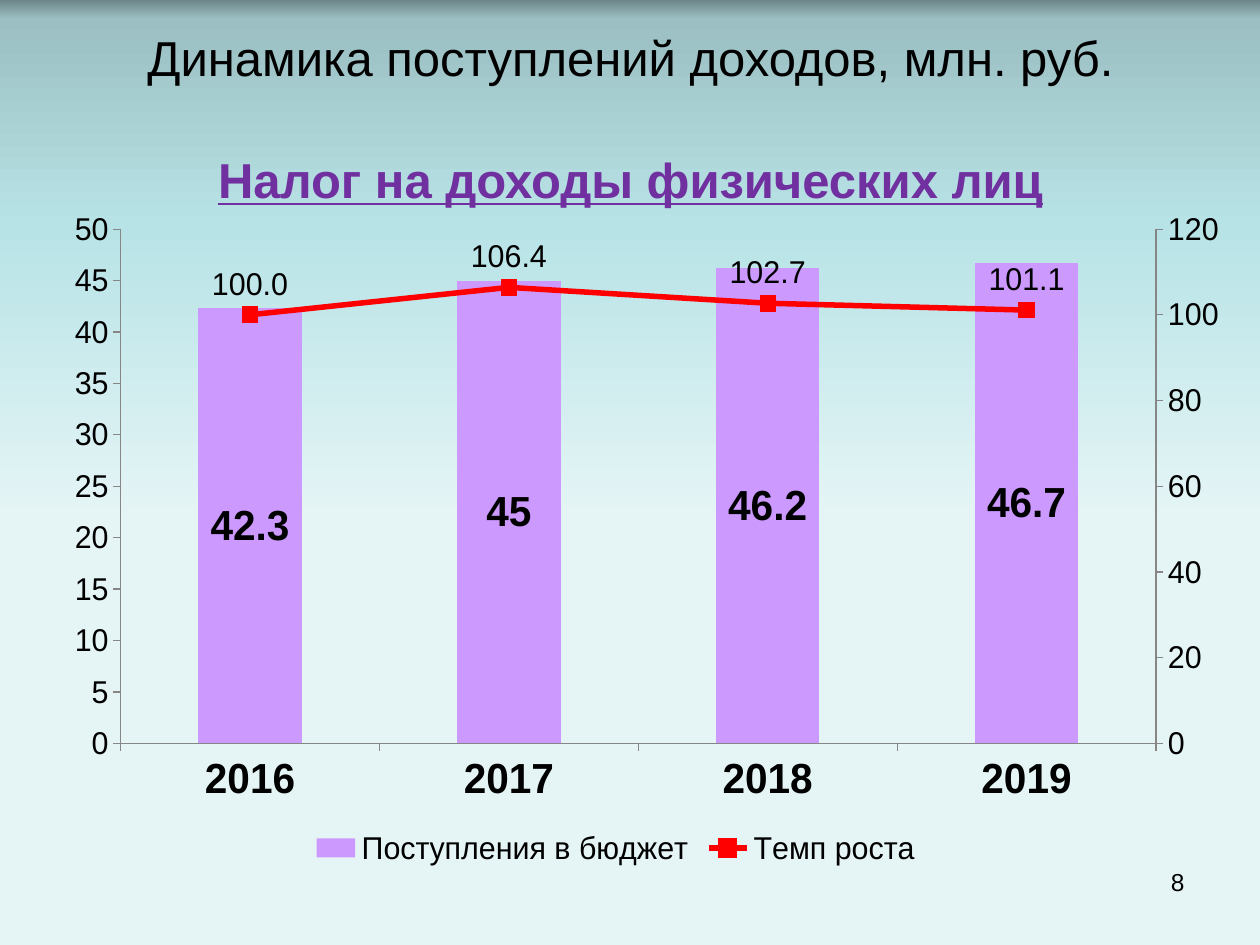
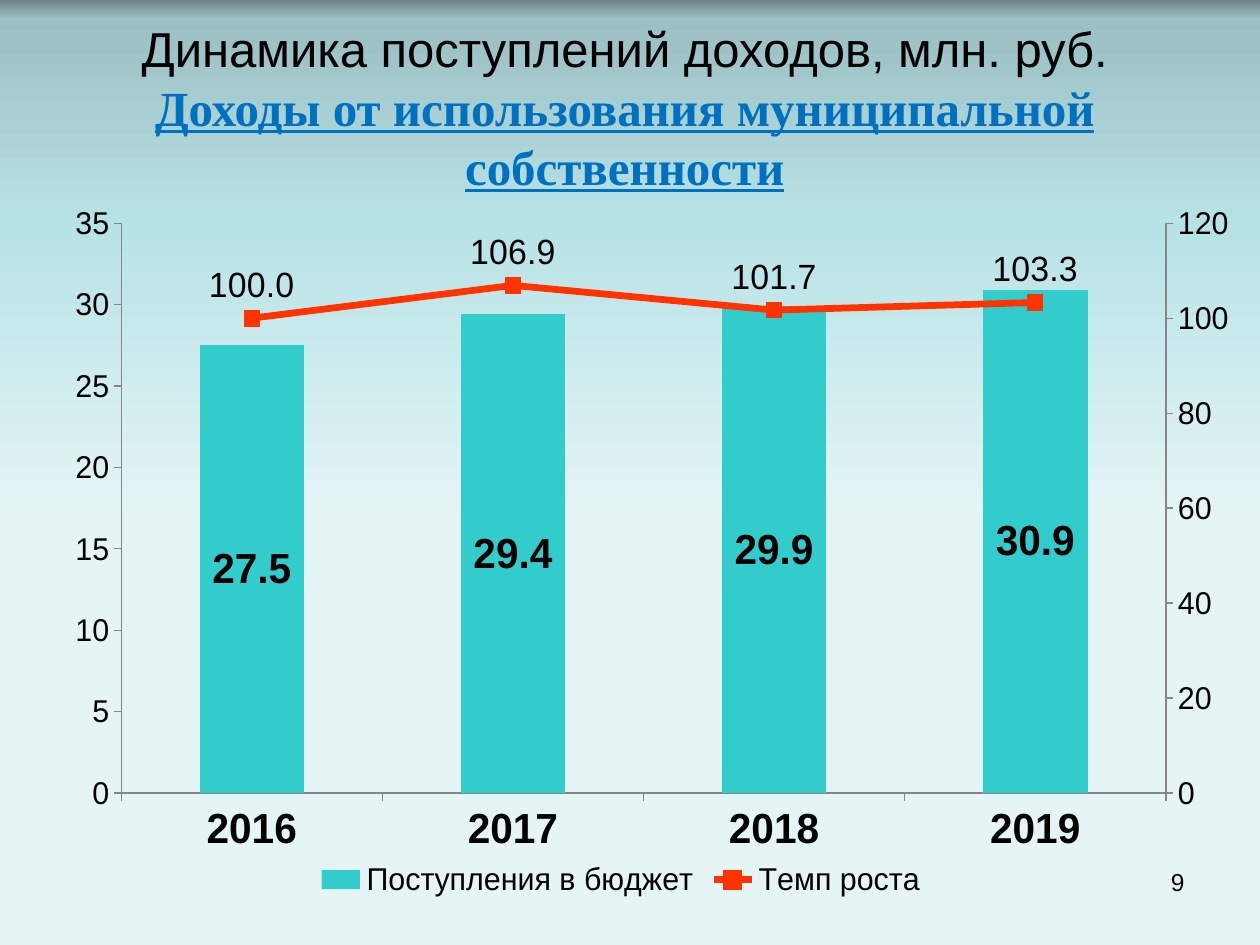
from copy import deepcopy

from pptx import Presentation
from pptx import util as u
from pptx.chart import axis as ax
from pptx.chart.data import CategoryChartData
from pptx.dml.color import RGBColor
from pptx.enum import chart as ch, text
from pptx.oxml import parse_xml
from pptx.oxml.ns import nsdecls, qn

INK = {
    "text": "000000", "axis": "868686",
    "violet": "7030A0", "lilac": "CC99FF", "red": "FF0000",
    "blue": "0070C0", "teal": "33CCCC", "orange": "FF3300",
}
SKY = [(0, "6D8688"), (2, "9BBFC2"), (24, "B8E3E6"), (55, "E5F5F6")]
YEARS = ["2016", "2017", "2018", "2019"]
HEAD = "Динамика поступлений доходов, млн. руб."


def rgb(name):
    return RGBColor.from_string(INK[name])


class Deck:
    face = "Arial"

    def __init__(self):
        self.prs = Presentation()
        self.prs.slide_width, self.prs.slide_height = u.Cm(25.4), u.Cm(19.05)
        self.slide = None
        self.sky()

    def sky(self):
        """Vertical gradient behind every slide."""
        master = self.prs.slide_master
        fill = master.background.fill
        fill.gradient()
        fill.gradient_angle = 270
        stops = next(master._element.iter(qn("a:gsLst")))
        for stop in list(stops):
            stops.remove(stop)
        for pos, tone in SKY:
            stops.append(parse_xml(
                f'<a:gs {nsdecls("a")} pos="{pos * 1000}">'
                f'<a:srgbClr val="{tone}"/></a:gs>'))

    def page(self, num):
        self.slide = self.prs.slides.add_slide(self.prs.slide_layouts[6])
        frame = self.box(18.21, 17.35, 5.92, 1.32)
        self.line(frame.paragraphs[0], str(num), 14, text.PP_ALIGN.RIGHT)

    def box(self, *at):
        frame = self.slide.shapes.add_textbox(*map(u.Cm, at)).text_frame
        frame.word_wrap = True
        return frame

    def line(self, para, words, size, align, tone="text", face=None):
        para.text, para.alignment = words, align
        font = para.font
        font.size, font.name = u.Pt(size), face or self.face
        font.color.rgb = rgb(tone)
        return font

    def title(self, at, topic, tone, face=None, gap=0):
        frame = self.box(*at)
        frame.vertical_anchor = text.MSO_ANCHOR.MIDDLE
        mid = text.PP_ALIGN.CENTER
        self.line(frame.paragraphs[0], HEAD, 28, mid)
        para = frame.add_paragraph()
        para.space_before = u.Pt(gap)
        font = self.line(para, topic, 28, mid, tone, face)
        font.bold = font.underline = True

    def chart(self, at, plot, sums, rates, bar, trend, width, size):
        """Stacked columns with a growth line on the right-hand axis."""
        data = CategoryChartData()
        data.categories = YEARS
        data.add_series("Поступления в бюджет", sums)
        data.add_series("Темп роста", rates)
        chart = self.slide.shapes.add_chart(
            ch.XL_CHART_TYPE.COLUMN_STACKED, *map(u.Cm, at), data).chart
        chart.has_title = False
        chart.font.size, chart.font.name = u.Pt(18), self.face
        chart.font.color.rgb = rgb("text")
        chart.has_legend = True
        chart.legend.position = ch.XL_LEGEND_POSITION.BOTTOM
        chart.legend.include_in_layout = False

        # Axes
        for axis in (chart.category_axis, chart.value_axis):
            axis.has_major_gridlines = False
            axis.major_tick_mark = ch.XL_TICK_MARK.OUTSIDE
            axis.minor_tick_mark = ch.XL_TICK_MARK.NONE
            axis.format.line.color.rgb = rgb("axis")
        font = chart.category_axis.tick_labels.font
        font.size, font.bold = u.Pt(24), True
        chart.value_axis.minimum_scale = 0
        area = chart._chartSpace.chart.plotArea
        self.split(area)
        self.place(area, plot)

        # Columns
        cols, curve = chart.plots
        cols.gap_width, cols.overlap = 150, 100
        cols.vary_by_categories = False
        fill = cols.series[0].format.fill
        fill.solid()
        fill.fore_color.rgb = rgb(bar)
        tags = cols.series[0].data_labels
        tags.show_value = True
        tags.font.size, tags.font.bold = u.Pt(24), True

        # Growth line
        rate = curve.series[0]
        rate.smooth = False
        rate.format.line.color.rgb = rgb(trend)
        rate.format.line.width = u.Pt(width)
        mark = rate.marker
        mark.style, mark.size = ch.XL_MARKER_STYLE.SQUARE, 9
        mark.format.fill.solid()
        mark.format.fill.fore_color.rgb = rgb(trend)
        mark.format.line.color.rgb = rgb(trend)
        tags = rate.data_labels
        tags.show_value = True
        tags.position = ch.XL_LABEL_POSITION.ABOVE
        tags.number_format, tags.number_format_is_linked = "0.0", False
        tags.font.size = u.Pt(size)

    def split(self, area):
        """Move the second series to a line plot with its own axes."""
        bars = area.find(qn("c:barChart"))
        ser = bars.findall(qn("c:ser"))[1]
        flag = ser.find(qn("c:invertIfNegative"))
        if flag is not None:
            ser.remove(flag)
        curve = parse_xml(
            f'<c:lineChart {nsdecls("c")}><c:grouping val="standard"/>'
            '<c:varyColors val="0"/><c:marker val="1"/>'
            '<c:axId val="501"/><c:axId val="502"/></c:lineChart>')
        curve.insert(2, ser)
        bars.addnext(curve)
        last = area.find(qn("c:valAx"))
        pair = [deepcopy(area.find(qn(tag))) for tag in ("c:catAx", "c:valAx")]
        for axis, own, other in zip(pair, ("501", "502"), ("502", "501")):
            axis.find(qn("c:axId")).set("val", own)
            axis.find(qn("c:crossAx")).set("val", other)
            last.addnext(axis)
            last = axis
        years, right = pair
        ax.CategoryAxis(years).visible = False
        right.find(qn("c:axPos")).set("val", "r")
        right.find(qn("c:crosses")).set("val", "max")
        ax.ValueAxis(right).maximum_scale = 120

    def place(self, area, plot):
        """Fix the inner plot area as shares of the chart."""
        old = area.find(qn("c:layout"))
        if old is not None:
            area.remove(old)
        size = "".join(f'<c:{k} val="{v}"/>' for k, v in zip("xywh", plot))
        area.insert(0, parse_xml(
            f'<c:layout {nsdecls("c")}><c:manualLayout>'
            '<c:layoutTarget val="inner"/><c:xMode val="edge"/>'
            f'<c:yMode val="edge"/>{size}</c:manualLayout></c:layout>'))


def main():
    deck = Deck()

    # Income tax
    deck.page(8)
    deck.title((0.43, 0.76, 24.56, 3.25), "Налог на доходы физических лиц",
               "violet", gap=36)
    deck.chart((1.07, 3.18, 23.5, 14.4), (0.06, 0.1, 0.92, 0.72),
               (42.3, 45, 46.2, 46.7), (100, 106.4, 102.7, 101.1),
               "lilac", "red", 3.25, 18)

    # Municipal property
    deck.page(9)
    deck.title((0.43, 0.25, 24.33, 3.8),
               "Доходы от использования муниципальной собственности",
               "blue", "Times New Roman")
    deck.chart((1.07, 1.07, 23.7, 17.15), (0.06, 0.2, 0.92, 0.67),
               (27.5, 29.4, 29.9, 30.9), (100, 106.9, 101.7, 103.3),
               "teal", "orange", 4, 20)

    deck.prs.save("out.pptx")


if __name__ == "__main__":
    main()
